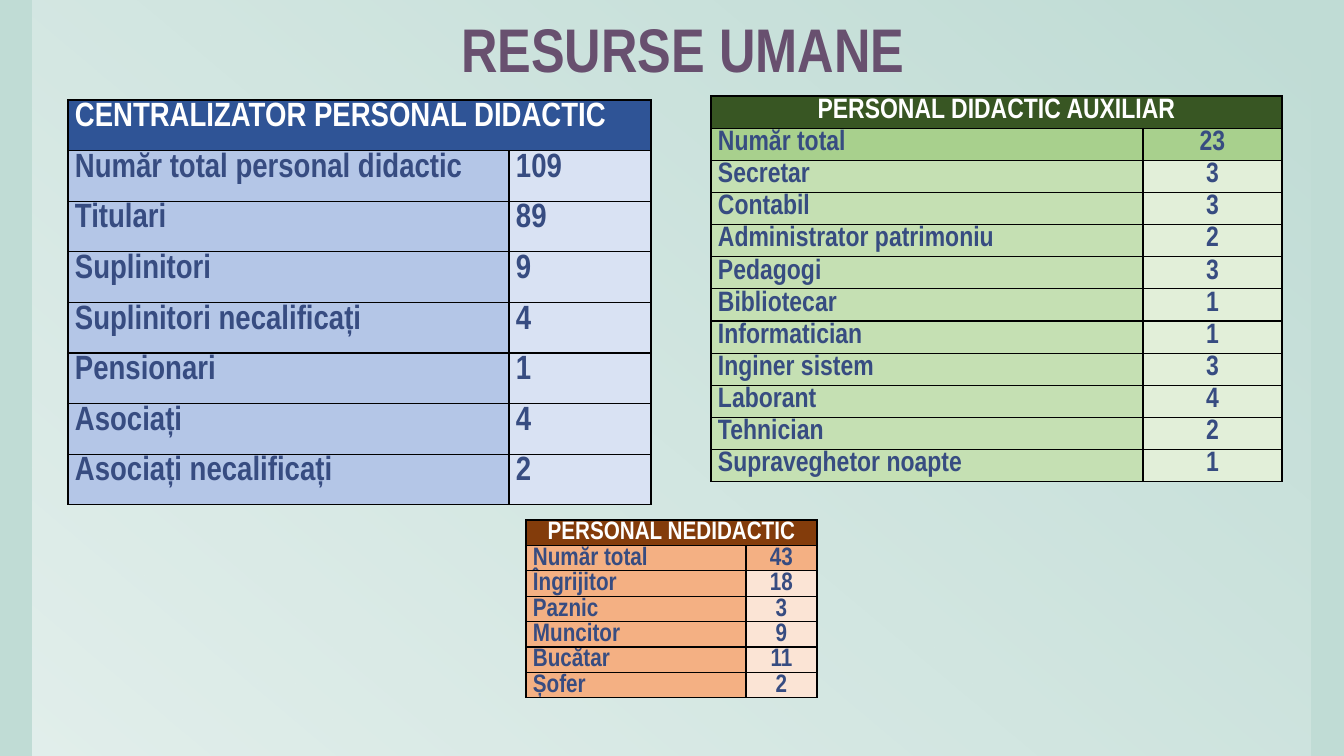
from lxml import etree
from pptx import Presentation
from pptx import util as u
from pptx.dml.color import RGBColor
from pptx.enum import shapes, text
from pptx.oxml.ns import qn

EMU_PER_PX = 914400 / 100.8
FONT = "Arial Narrow"
COLORS = {
    "background": "C0DCD5", "white": "FFFFFF", "border": "000000",
    "title": "68506F", "body": "374C81",
    "blue_head": "2F5496", "blue_label": "B4C6E7", "blue_value": "D9E2F3",
    "green_head": "385623", "green_total": "A8D08D",
    "green_label": "C5E0B3", "green_value": "E2EFD9",
    "orange_head": "833C0B", "orange_label": "F4B083", "orange_value": "FBE4D5",
}
TEACHING = [
    ("Număr total personal didactic", 109), ("Titulari", 89), ("Suplinitori", 9),
    ("Suplinitori necalificați", 4), ("Pensionari", 1), ("Asociați", 4),
    ("Asociați necalificați", 2),
]
AUXILIARY = [
    ("Număr total", 23), ("Secretar", 3), ("Contabil", 3),
    ("Administrator patrimoniu", 2), ("Pedagogi", 3), ("Bibliotecar", 1),
    ("Informatician", 1), ("Inginer sistem", 3), ("Laborant", 4),
    ("Tehnician", 2), ("Supraveghetor noapte", 1),
]
SUPPORT = [
    ("Număr total", 43), ("Îngrijitor", 18), ("Paznic", 3), ("Muncitor", 9),
    ("Bucătar", 11), ("Șofer", 2),
]


def px(length):
    return u.Emu(round(length * EMU_PER_PX))


def rgb(name):
    return RGBColor.from_string(COLORS[name])


def write(frame, words, size, color, align, spacing):
    frame.text = words
    paragraph = frame.paragraphs[0]
    paragraph.alignment = align
    paragraph.line_spacing = spacing
    font = paragraph.runs[0].font
    font.name, font.size, font.bold = FONT, u.Pt(size), True
    font.color.rgb = rgb(color)


def add_panel(slide):
    """Light panel that fades in towards the lower left, behind everything."""
    panel = slide.shapes.add_shape(
        shapes.MSO_SHAPE.RECTANGLE, px(33), 0, px(1278), px(756))
    panel.shadow.inherit = False
    panel.line.fill.background()
    panel.fill.gradient()
    panel.fill.gradient_angle = 230
    for stop in panel.fill.gradient_stops:
        stop.color.rgb = rgb("white")
    stop_colors = panel._element.spPr.xpath("./a:gradFill//a:srgbClr")
    for stop_color, opacity in zip(stop_colors, (0, 55)):
        etree.SubElement(stop_color, qn("a:alpha"), val=str(opacity * 1000))
    slide.shapes._spTree.insert(2, panel._element)


def set_title(slide, words):
    title = slide.shapes.title
    title.left, title.top, title.width, title.height = map(px, (123, 8, 1120, 84))
    frame = title.text_frame
    frame.margin_left = frame.margin_right = px(13)
    frame.margin_top = frame.margin_bottom = px(7)
    frame.vertical_anchor = text.MSO_ANCHOR.BOTTOM
    frame.word_wrap = True
    frame.auto_size = text.MSO_AUTO_SIZE.NONE
    write(frame, words, 44, "title", text.PP_ALIGN.CENTER, 0.85)


def format_cell(cell, fill):
    cell.margin_left = cell.margin_right = px(7)
    cell.margin_top = cell.margin_bottom = 0
    properties = cell._tc.get_or_add_tcPr()
    for side in ("lnL", "lnR", "lnT", "lnB"):
        border = etree.SubElement(properties, qn(f"a:{side}"), w=str(u.Pt(1)))
        solid = etree.SubElement(border, qn("a:solidFill"))
        etree.SubElement(solid, qn("a:srgbClr"), val=COLORS["border"])
    cell.fill.solid()
    cell.fill.fore_color.rgb = rgb(fill)


def add_staff_table(slide, heading, staff, box, value_width, size, hue, align,
                    total_fill=None):
    """Merged heading over label and count rows; total_fill marks the first."""
    left, top, width, height = box
    count = len(staff) + 1
    frame = slide.shapes.add_table(count, 2, *map(px, box))
    table = frame.table
    table.first_row = table.horz_banding = False
    table.columns[0].width = px(width - value_width)
    table.columns[1].width = px(value_width)
    for row in table.rows:
        row.height = px(height / count)

    for cell in table.rows[0].cells:
        format_cell(cell, f"{hue}_head")
    table.cell(0, 0).merge(table.cell(0, 1))
    write(table.cell(0, 0).text_frame, heading, size, "white", align, 1.07)

    for index, (label, value) in enumerate(staff, start=1):
        fills = (f"{hue}_label", f"{hue}_value")
        if index == 1 and total_fill:
            fills = (total_fill, total_fill)
        entries = ((label, text.PP_ALIGN.LEFT), (str(value), align))
        for column, (words, alignment) in enumerate(entries):
            cell = table.cell(index, column)
            format_cell(cell, fills[column])
            write(cell.text_frame, words, size, "body", alignment, 1.07)


def main():
    deck = Presentation()
    deck.slide_width, deck.slide_height = px(1344), px(756)
    slide = deck.slides.add_slide(deck.slide_layouts[5])
    slide.background.fill.solid()
    slide.background.fill.fore_color.rgb = rgb("background")
    add_panel(slide)
    set_title(slide, "RESURSE UMANE")

    left, center = text.PP_ALIGN.LEFT, text.PP_ALIGN.CENTER
    add_staff_table(slide, "CENTRALIZATOR PERSONAL DIDACTIC", TEACHING,
                    (68, 100, 583, 405), 142, 24, "blue", left)
    add_staff_table(slide, "PERSONAL DIDACTIC AUXILIAR", AUXILIARY,
                    (711, 96, 571, 386), 139, 20, "green", center, "green_total")
    add_staff_table(slide, "PERSONAL NEDIDACTIC", SUPPORT,
                    (526, 520, 291, 178), 71, 18, "orange", center, "orange_label")
    deck.save("out.pptx")


if __name__ == "__main__":
    main()
